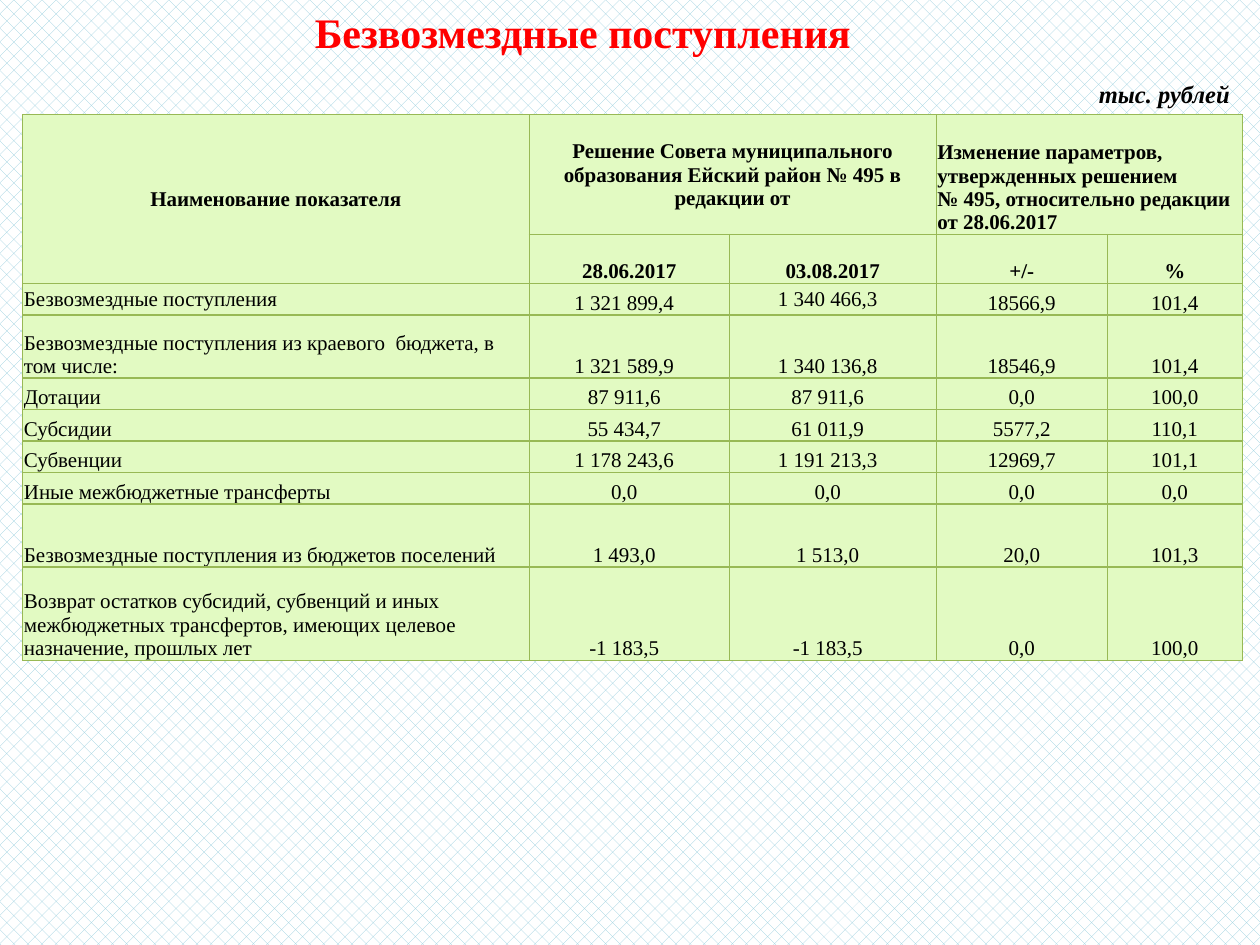
import pptx
import pptx.util
import pptx.dml.color
import pptx.enum.dml
import pptx.enum.text
import pptx.oxml
import pptx.oxml.ns

Inches = pptx.util.Inches
RGBColor = pptx.dml.color.RGBColor
ALIGN = pptx.enum.text.PP_ALIGN
ANCHOR = pptx.enum.text.MSO_ANCHOR

BLACK = RGBColor(0x00, 0x00, 0x00)
RED = RGBColor(0xFF, 0x00, 0x00)
WHITE = RGBColor(0xFF, 0xFF, 0xFF)
PALE_BLUE = RGBColor(0x93, 0xCD, 0xDD)
PALE_GREEN = RGBColor(0xE2, 0xFA, 0xC2)
BORDER_GREEN = RGBColor(0x98, 0xB9, 0x55)


def add_text(paragraph, text, size, color=BLACK, bold=False, italic=False):
    for index, line in enumerate(text.split("\n")):
        if index:
            paragraph.add_line_break()
        run = paragraph.add_run()
        run.text = line
        run.font.name = "Times New Roman"
        run.font.size = pptx.util.Pt(size)
        run.font.color.rgb = color
        run.font.bold = bold
        run.font.italic = italic


def add_borders(cell):
    properties = cell._tc.get_or_add_tcPr()
    for side in ("lnL", "lnR", "lnT", "lnB"):
        properties.append(pptx.oxml.parse_xml(
            f'<a:{side} {pptx.oxml.ns.nsdecls("a")} w="{pptx.util.Pt(0.75)}">'
            f'<a:solidFill><a:srgbClr val="{BORDER_GREEN}"/></a:solidFill></a:{side}>'))


presentation = pptx.Presentation()
presentation.slide_width = Inches(10)
presentation.slide_height = Inches(7.5)
slide = presentation.slides.add_slide(presentation.slide_layouts[6])

background = slide.background.fill
background.patterned()
background.pattern = pptx.enum.dml.MSO_PATTERN.PERCENT_25
background.fore_color.rgb = PALE_BLUE
background.back_color.rgb = WHITE

unit_box = slide.shapes.add_textbox(Inches(8.6), Inches(0.57), Inches(1.26), Inches(0.34))
unit_frame = unit_box.text_frame
unit_frame.word_wrap = True
unit_frame.auto_size = pptx.enum.text.MSO_AUTO_SIZE.SHAPE_TO_FIT_TEXT
unit_frame.vertical_anchor = ANCHOR.MIDDLE
unit_frame.paragraphs[0].alignment = ALIGN.RIGHT
add_text(unit_frame.paragraphs[0], "тыс. рублей", 14, bold=True, italic=True)

title_box = slide.shapes.add_textbox(Inches(2.4), Inches(0), Inches(4.5), Inches(0.5))
title_frame = title_box.text_frame
title_frame.word_wrap = False
title_frame.auto_size = pptx.enum.text.MSO_AUTO_SIZE.SHAPE_TO_FIT_TEXT
add_text(title_frame.paragraphs[0], "Безвозмездные поступления", 24, RED, bold=True)

rows = [
    ("Наименование показателя",
     "Решение Совета муниципального образования Ейский район № 495 в редакции от", "",
     "Изменение параметров, утвержденных решением\n№ 495, относительно редакции от 28.06.2017", ""),
    ("", "28.06.2017", "03.08.2017", "+/-", "%"),
    ("Безвозмездные поступления", "1 321 899,4", "1 340 466,3", "18566,9", "101,4"),
    ("Безвозмездные поступления из краевого  бюджета, в том числе:",
     "1 321 589,9", "1 340 136,8", "18546,9", "101,4"),
    ("Дотации", "87 911,6", "87 911,6", "0,0", "100,0"),
    ("Субсидии", "55 434,7", "61 011,9", "5577,2", "110,1"),
    ("Субвенции", "1 178 243,6", "1 191 213,3", "12969,7", "101,1"),
    ("Иные межбюджетные трансферты", "0,0", "0,0", "0,0", "0,0"),
    ("Безвозмездные поступления из бюджетов поселений", "1 493,0", "1 513,0", "20,0", "101,3"),
    ("Возврат остатков субсидий, субвенций и иных межбюджетных трансфертов, "
     "имеющих целевое назначение, прошлых лет", "-1 183,5", "-1 183,5", "0,0", "100,0"),
]
column_widths = [4.02, 1.59, 1.64, 1.36, 1.07]
row_heights = [0.95, 0.39, 0.25, 0.5, 0.25, 0.25, 0.25, 0.25, 0.5, 0.74]
header_rows = 2
middle_cells = {(0, 0), (0, 1), (2, 0), (2, 2)}

table = slide.shapes.add_table(
    len(rows), len(column_widths), Inches(0.18), Inches(0.91),
    Inches(sum(column_widths)), Inches(sum(row_heights))).table
for column, width in zip(table.columns, column_widths):
    column.width = Inches(width)
for row, height in zip(table.rows, row_heights):
    row.height = Inches(height)

for row_index, texts in enumerate(rows):
    is_header = row_index < header_rows
    for column_index, text in enumerate(texts):
        cell = table.cell(row_index, column_index)
        add_borders(cell)
        cell.fill.solid()
        cell.fill.fore_color.rgb = PALE_GREEN
        is_budget_value = not is_header and column_index in (1, 2)
        cell.margin_left = cell.margin_top = Inches(0.01)
        cell.margin_right = Inches(0.09 if is_budget_value else 0.01)
        cell.margin_bottom = Inches(0)
        is_middle = (row_index, column_index) in middle_cells
        cell.vertical_anchor = ANCHOR.MIDDLE if is_middle else ANCHOR.BOTTOM
        if text:
            paragraph = cell.text_frame.paragraphs[0]
            is_left = (row_index, column_index) == (0, 3) or (column_index == 0 and not is_header)
            paragraph.alignment = ALIGN.LEFT if is_left else ALIGN.CENTER
            add_text(paragraph, text, 12, bold=is_header)

table.cell(0, 0).merge(table.cell(1, 0))
table.cell(0, 1).merge(table.cell(0, 2))
table.cell(0, 3).merge(table.cell(0, 4))

presentation.save("out.pptx")
